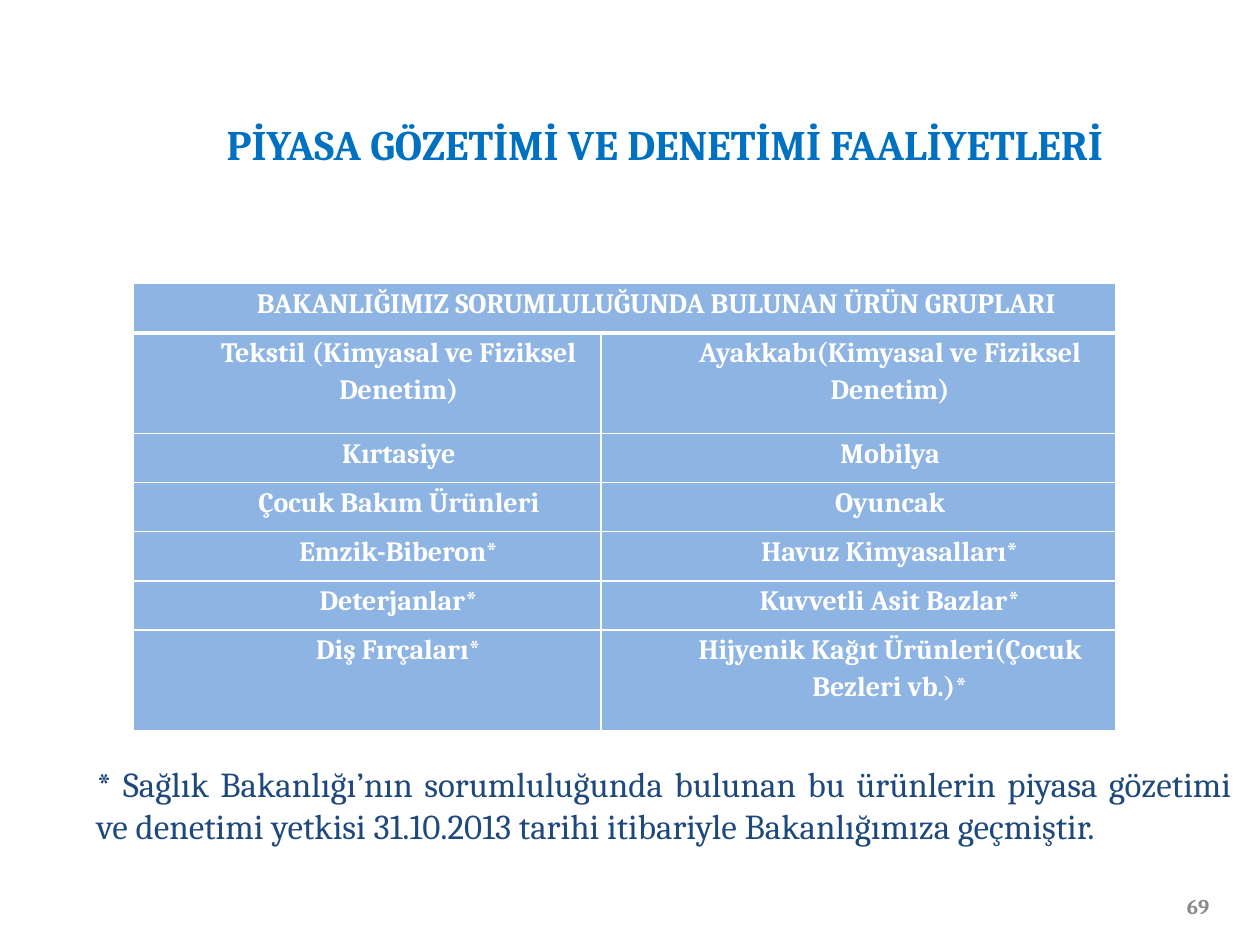
from lxml.etree import SubElement
from pptx import Presentation
from pptx.dml.color import RGBColor
from pptx.enum.text import MSO_ANCHOR, MSO_AUTO_SIZE, PP_ALIGN
from pptx.oxml.ns import qn
from pptx.util import Cm, Pt

TITLE = "PİYASA GÖZETİMİ VE DENETİMİ FAALİYETLERİ"
TABLE_HEADING = "BAKANLIĞIMIZ SORUMLULUĞUNDA BULUNAN ÜRÜN GRUPLARI"
PRODUCT_GROUPS = [
    ("Tekstil (Kimyasal ve Fiziksel Denetim)", "Ayakkabı(Kimyasal ve Fiziksel Denetim)"),
    ("Kırtasiye", "Mobilya"),
    ("Çocuk Bakım Ürünleri", "Oyuncak"),
    ("Emzik-Biberon*", "Havuz Kimyasalları*"),
    ("Deterjanlar*", "Kuvvetli Asit Bazlar*"),
    ("Diş Fırçaları*", "Hijyenik Kağıt Ürünleri(Çocuk Bezleri vb.)*"),
]
FOOTNOTE = (
    "* Sağlık Bakanlığı’nın sorumluluğunda bulunan bu ürünlerin piyasa gözetimi "
    "ve denetimi yetkisi 31.10.2013 tarihi itibariyle Bakanlığımıza geçmiştir."
)
COLUMN_WIDTHS = (9.43, 10.38)
SINGLE_ROW, DOUBLE_ROW = 0.99, 2.03


def color(hex_value):
    return RGBColor.from_string(hex_value)


def set_attributes(target, values):
    for name, value in values.items():
        setattr(target, name, value)


class SlideBuilder:
    font_name = "Cambria"
    white = "FFFFFF"
    cell_fill = "8EB4E3"
    cell_indent = Cm(1.27)
    cell_format = {"margin_left": Cm(0.19), "margin_right": Cm(0.19),
                   "margin_top": 0, "margin_bottom": 0}

    def __init__(self, slide):
        self.slide = slide

    def add_text(self, text_frame, text, size, hex_value, bold=False, **paragraph_format):
        paragraph = text_frame.paragraphs[0]
        set_attributes(paragraph, {"alignment": PP_ALIGN.CENTER, **paragraph_format})
        run = paragraph.add_run()
        run.text = text
        set_attributes(run.font, {"name": self.font_name, "size": Pt(size), "bold": bold})
        run.font.color.rgb = color(hex_value)
        return paragraph

    def title(self, text, left, top, width, height):
        title = self.slide.shapes.title
        set_attributes(title, {"left": Cm(left), "top": Cm(top),
                               "width": Cm(width), "height": Cm(height)})
        set_attributes(title.text_frame, {"word_wrap": True,
                                          "auto_size": MSO_AUTO_SIZE.NONE,
                                          "vertical_anchor": MSO_ANCHOR.BOTTOM})
        self.add_text(title.text_frame, text, 24, "0070C0", bold=True)

    def text_box(self, text, left, top, width, height, size, hex_value,
                 frame_format, bold=False, **paragraph_format):
        box = self.slide.shapes.add_textbox(Cm(left), Cm(top), Cm(width), Cm(height))
        set_attributes(box.text_frame, {"word_wrap": True, **frame_format})
        self.add_text(box.text_frame, text, size, hex_value, bold, **paragraph_format)

    def borders(self, cell, top, bottom):
        properties = cell._tc.get_or_add_tcPr()
        for side, points in (("L", 1), ("R", 1), ("T", top), ("B", bottom)):
            line = SubElement(properties, qn(f"a:ln{side}"), w=str(Pt(points)))
            fill = SubElement(line, qn("a:solidFill"))
            SubElement(fill, qn("a:srgbClr"), val=self.white)

    def cell(self, cell, text, top, bottom):
        set_attributes(cell, self.cell_format)
        self.borders(cell, top, bottom)
        cell.fill.solid()
        cell.fill.fore_color.rgb = color(self.cell_fill)
        if text:
            paragraph = self.add_text(cell.text_frame, text, 16, self.white, bold=True,
                                      line_spacing=1.15)
            properties = paragraph._p.get_or_add_pPr()
            properties.set("marL", str(self.cell_indent))
            properties.set("indent", "0")

    def table(self, rows, left, top, column_widths, row_heights):
        """Build a table whose first row is one merged heading."""
        table = self.slide.shapes.add_table(
            len(rows), len(column_widths), Cm(left), Cm(top),
            Cm(sum(column_widths)), Cm(sum(row_heights))).table
        for column, width in zip(table.columns, column_widths):
            column.width = Cm(width)
        for row, height in zip(table.rows, row_heights):
            row.height = Cm(height)
        for row_index, texts in enumerate(rows):
            top_line = 3 if row_index == 1 else 1
            bottom_line = 3 if row_index == 0 else 1
            for column_index, text in enumerate(texts):
                self.cell(table.cell(row_index, column_index), text, top_line, bottom_line)
        table.cell(0, 0).merge(table.cell(0, len(column_widths) - 1))


def main():
    presentation = Presentation()
    set_attributes(presentation, {"slide_width": Cm(25.4), "slide_height": Cm(19.05)})
    title_only = presentation.slide_layouts[5]
    builder = SlideBuilder(presentation.slides.add_slide(title_only))

    builder.title(TITLE, 3.99, 1.14, 18.82, 2.39)
    row_heights = [SINGLE_ROW, DOUBLE_ROW] + [SINGLE_ROW] * 4 + [DOUBLE_ROW]
    builder.table([(TABLE_HEADING, "")] + PRODUCT_GROUPS, 2.69, 5.72,
                  COLUMN_WIDTHS, row_heights)
    builder.text_box(FOOTNOTE, 1.7, 15.24, 23.39, 1.96, 20, "1F497D",
                     {"auto_size": MSO_AUTO_SIZE.SHAPE_TO_FIT_TEXT},
                     alignment=PP_ALIGN.JUSTIFY)
    builder.text_box("69", 22.91, 17.93, 2.49, 0.66, 12, "898989",
                     {"vertical_anchor": MSO_ANCHOR.MIDDLE}, bold=True)
    presentation.save("out.pptx")


if __name__ == "__main__":
    main()
